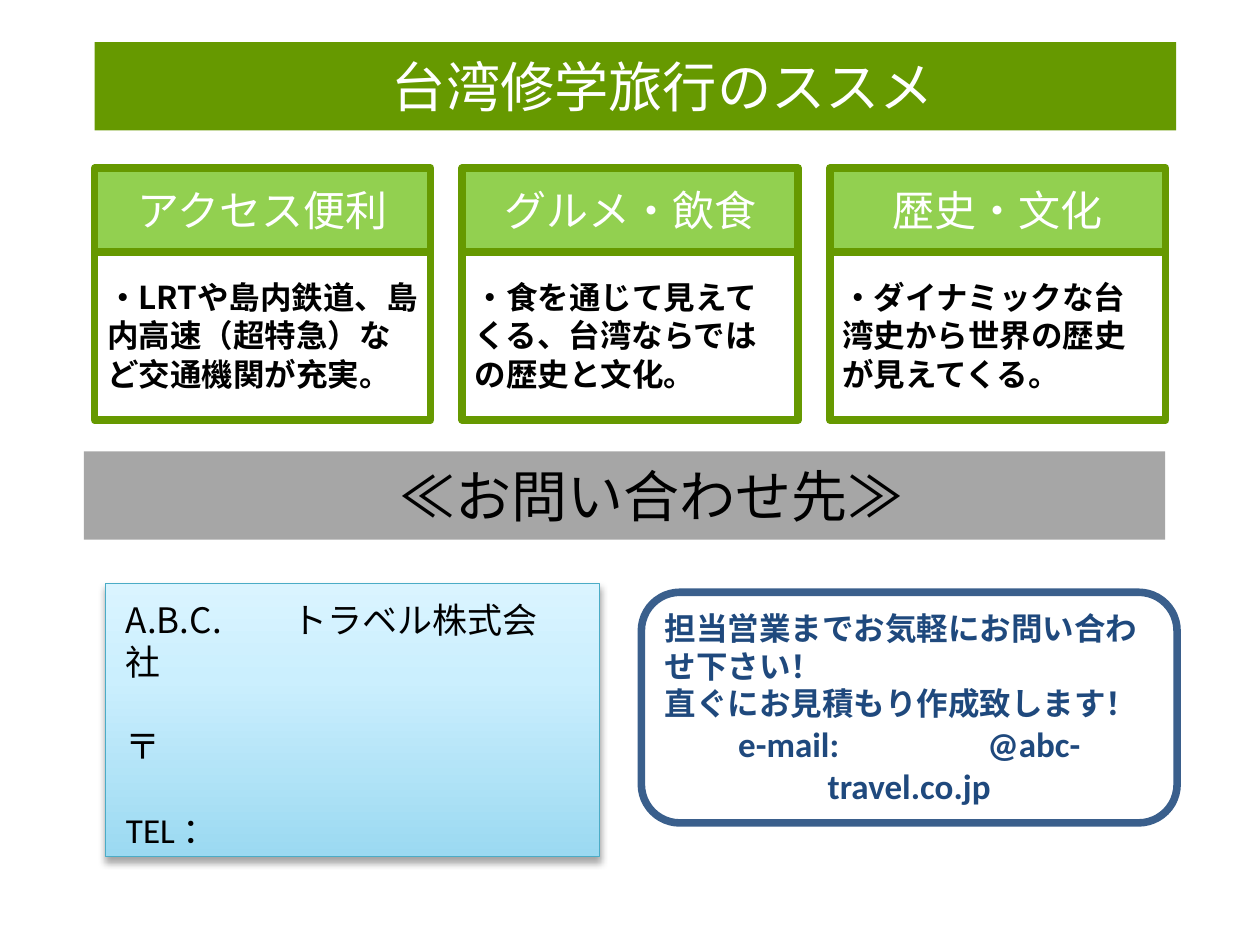
"""Build the slide on school trips to Taiwan."""
from lxml import etree
from pptx import Presentation, util as u
from pptx.dml.color import RGBColor
from pptx.enum import shapes, text
from pptx.oxml import parse_xml
from pptx.oxml.ns import nsdecls, qn

HUES = {"green": "669900", "lime": "92D050", "grey": "A6A6A6", "white": "FFFFFF",
        "black": "000000", "navy": "1F497D", "blue": "3A5F8C", "teal": "4BACC6"}
MID, TOP = text.MSO_ANCHOR.MIDDLE, text.MSO_ANCHOR.TOP
LEFT, CENTER = text.PP_ALIGN.LEFT, text.PP_ALIGN.CENTER
RECT, ROUND = shapes.MSO_SHAPE.RECTANGLE, shapes.MSO_SHAPE.ROUNDED_RECTANGLE
SANS, NOTO = "Calibri", "Noto Sans CJK JP"


def box(area, kind=RECT, fill=None, line=None, width=4.33, **form):
    shape = slide.shapes.add_shape(kind, *map(u.Cm, area))
    shape.shadow.inherit = False
    for part, hue in ((shape.fill, fill), (shape.line.fill, line)):
        if hue:
            part.solid()
            part.fore_color.rgb = RGBColor.from_string(HUES[hue])
        else:
            part.background()
    if line:
        shape.line.width = u.Pt(width)
    for name, value in {"word_wrap": True, "vertical_anchor": MID, **form}.items():
        setattr(shape.text_frame, name, value)
    return shape


def write(shape, words, size, hue, font=SANS, bold=False, gap=0, first=True, **form):
    frame = shape.text_frame
    para = frame.paragraphs[0] if first else frame.add_paragraph()
    for name, value in {"alignment": CENTER, **form}.items():
        setattr(para, name, value)
    head, space, tail = words.partition("\u3000")
    for piece in filter(None, (head, space, tail)):
        run = para.add_run()
        run.text = piece
        look = {"size": u.Pt(size), "name": font, "bold": bold}
        for name, value in look.items():
            setattr(run.font, name, value)
        run.font.color.rgb = RGBColor.from_string(HUES[hue])
        if piece == space:
            run.font._element.set("spc", str(gap * 100))


deck = Presentation()
deck.slide_width, deck.slide_height = u.Cm(25.4), u.Cm(19.05)
slide = deck.slides.add_slide(deck.slide_layouts[6])

BARS = [
    ((1.91, 0.85, 21.8, 1.78), "green", "台湾修学旅行のススメ", 31, "white"),
    ((1.69, 9.1, 21.8, 1.78), "grey", "≪お問い合わせ先≫", 32, "black"),
]
for area, fill, words, size, hue in BARS:
    bar = box(area, fill=fill, margin_left=u.Cm(1.35))
    write(bar, words, size, hue)

CARDS = [
    ("アクセス便利", "・LRTや島内鉄道、島内高速（超特急）など交通機関が充実。"),
    ("グルメ・飲食", "・食を通じて見えてくる、台湾ならではの歴史と文化。"),
    ("歴史・文化", "・ダイナミックな台湾史から世界の歴史が見えてくる。"),
]
for i, (name, words) in enumerate(CARDS):
    left = 1.91 + 7.41 * i
    body = box((left, 5.08, 6.77, 3.39), line="green", vertical_anchor=TOP,
               margin_top=u.Cm(0.51))
    write(body, words, 18, "black", NOTO, True, alignment=LEFT, line_spacing=u.Pt(22))
    head = box((left, 3.39, 6.77, 1.69), fill="lime", line="green")
    write(head, name, 24, "white")

panel = box((2.13, 11.76, 9.96, 5.51), line="teal", width=0.75)
props = panel._element.spPr
STOPS = [(0, "9BD9F1"), (65, "CBEFFE"), (100, "DAF4FF")]
stops = "".join(f'<a:gs pos="{pos}000"><a:srgbClr val="{hue}"/></a:gs>' for pos, hue in STOPS)
blend = parse_xml(f'<a:gradFill {nsdecls("a")} rotWithShape="1"><a:gsLst>{stops}</a:gsLst>'
                  '<a:lin ang="16200000" scaled="0"/></a:gradFill>')
props.replace(props.find(qn("a:noFill")), blend)
shade = etree.SubElement(props.find(qn("a:effectLst")), qn("a:outerShdw"),
                         blurRad=str(u.Pt(4)), dist=str(u.Pt(3)), dir="5400000", rotWithShape="0")
tint = etree.SubElement(shade, qn("a:srgbClr"), val=HUES["black"])
etree.SubElement(tint, qn("a:alpha"), val="35000")

firm = slide.shapes.add_textbox(*map(u.Cm, (2.54, 11.94, 9.14, 4.83)))
firm.text_frame.word_wrap = True
firm.text_frame.margin_left = 0
write(firm, "A.B.C.\u3000トラベル株式会社", 20, "black", NOTO, gap=20,
      alignment=LEFT, line_spacing=u.Pt(24))
for words in ("〒", "TEL ："):
    write(firm, words, 20, "black", first=False, alignment=LEFT, space_before=u.Pt(24))

call = box((12.93, 11.94, 10.8, 4.65), ROUND, line="blue")
LINES = [
    ("担当営業までお気軽にお問い合わせ下さい！", 18, LEFT),
    ("直ぐにお見積もり作成致します！", 18, LEFT),
    ("e-mail: \u3000@abc-travel.co.jp", 20, CENTER),
]
for i, (words, size, side) in enumerate(LINES):
    write(call, words, size, "navy", bold=True, gap=60, first=i == 0, alignment=side)

deck.save("out.pptx")
